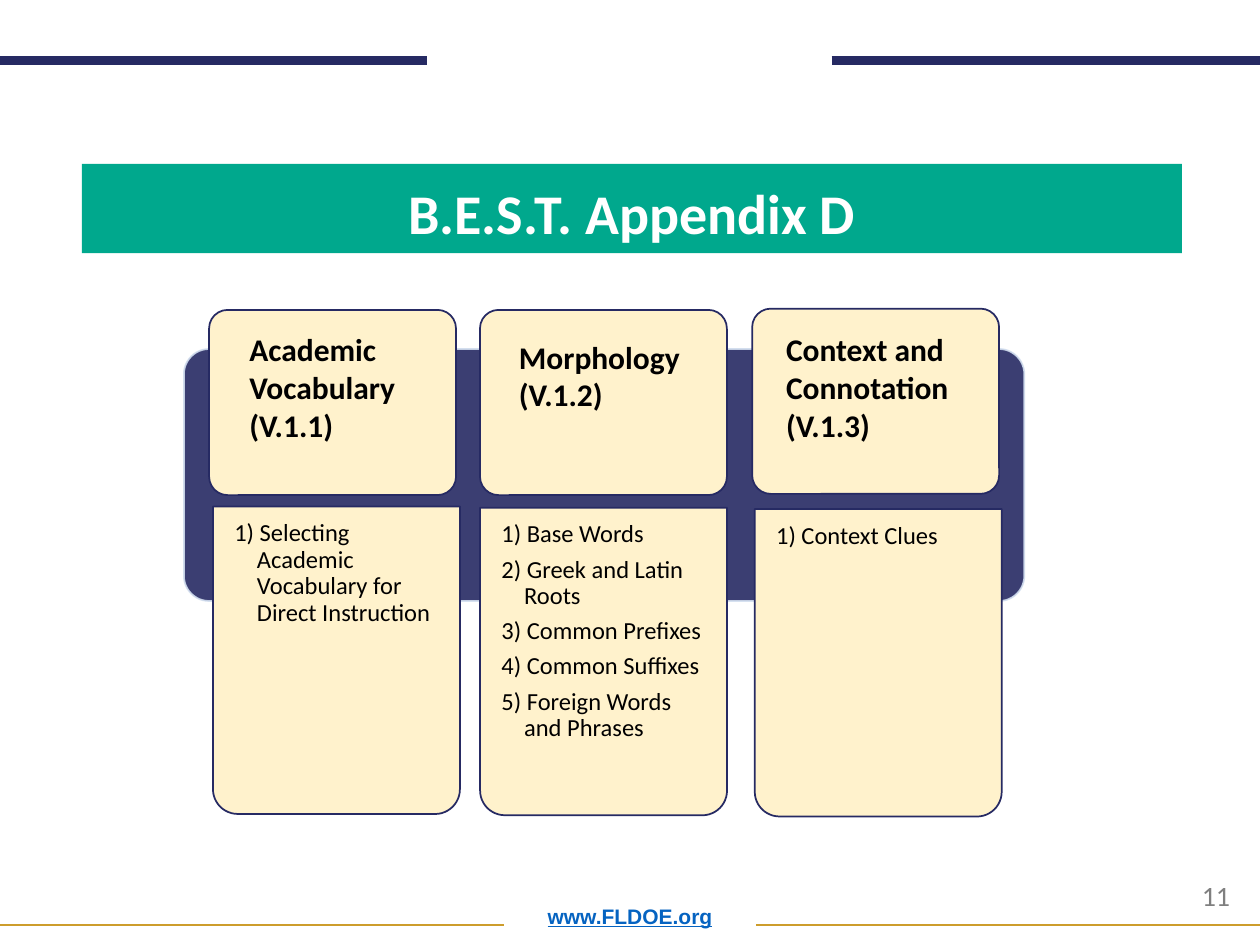
from lxml import etree
from pptx import Presentation
from pptx.dml.color import RGBColor
from pptx.enum.shapes import MSO_CONNECTOR, MSO_SHAPE
from pptx.enum.text import MSO_ANCHOR, MSO_AUTO_SIZE, PP_ALIGN
from pptx.oxml.ns import qn
from pptx.util import Inches, Pt

STRAIGHT = MSO_CONNECTOR.STRAIGHT
ROUNDED = MSO_SHAPE.ROUNDED_RECTANGLE
ROUND_TOP = MSO_SHAPE.ROUND_2_SAME_RECTANGLE
BOTTOM, CENTER, LEFT = MSO_ANCHOR.BOTTOM, PP_ALIGN.CENTER, PP_ALIGN.LEFT
NO_FIT = MSO_AUTO_SIZE.NONE

NAVY = RGBColor(0x26, 0x2A, 0x63)
GOLD = RGBColor(0xCD, 0x9D, 0x2C)
TEAL = RGBColor(0x00, 0xA8, 0x8D)
CREAM = RGBColor(0xFF, 0xF2, 0xCC)
PALE = RGBColor(0xD2, 0xDE, 0xEF)
LINK = RGBColor(0x05, 0x63, 0xC1)
GREY = RGBColor(0x7F, 0x7F, 0x7F)
WHITE = RGBColor(0xFF, 0xFF, 0xFF)
BLACK = RGBColor(0x00, 0x00, 0x00)

RULES = [(0, 3.39, 0.48, NAVY, 5), (6.6, 10, 0.48, NAVY, 5),
         (0, 4, 7.34, GOLD, 1), (6, 10, 7.34, GOLD, 1)]
HEAD_SIZE, LIST_SIZE = (1.96, 1.47), (1.96, 2.44)
COLUMNS = [
    {"head": (1.66, 2.46), "list": (1.69, 4.02),
     "label": (1.88, 2.57, 1.71, 1.31),
     "title": ["Academic Vocabulary", "(V.1.1)"],
     "items": ["1) Selecting Academic Vocabulary for Direct Instruction"]},
    {"head": (3.81, 2.46), "list": (3.81, 4.03),
     "label": (4.02, 2.63, 1.76, 0.71),
     "title": ["Morphology (V.1.2)"],
     "items": ["1) Base Words", "2) Greek and Latin Roots",
               "3) Common Prefixes", "4) Common Suffixes",
               "5) Foreign Words and Phrases"]},
    {"head": (5.97, 2.45), "list": (5.99, 4.04),
     "label": (6.14, 2.57, 1.63, 1.01),
     "title": ["Context and Connotation (V.1.3)"],
     "items": ["1) Context Clues"]},
]


def fill_text(tf, lines, size, color, align=LEFT, para=None, **font):
    """Write one paragraph per line with shared formatting."""
    tf.word_wrap = True
    tf.auto_size = NO_FIT
    font = {"name": "Calibri", "size": Pt(size), **font}
    for i, line in enumerate(lines):
        p = tf.add_paragraph() if i else tf.paragraphs[0]
        p.alignment = align
        for name, value in (para or {}).items():
            setattr(p, name, value)
        r = p.add_run()
        r.text = line
        r.font.color.rgb = color
        for name, value in font.items():
            setattr(r.font, name, value)


def add_text(s, box, lines, size, color, **formats):
    """Add a text box and return its text frame."""
    tf = s.shapes.add_textbox(*map(Inches, box)).text_frame
    fill_text(tf, lines, size, color, **formats)
    return tf


def add_panel(s, kind, box, fill, line, adjust):
    """Add a flat panel with a thin outline."""
    sp = s.shapes.add_shape(kind, *map(Inches, box))
    sp.shadow.inherit = False
    sp.fill.solid()
    sp.fill.fore_color.rgb = fill
    sp.line.color.rgb = line
    sp.line.width = Pt(1)
    sp.adjustments[0] = adjust
    return sp


def add_rule(s, left, right, y, color, width):
    """Draw a horizontal rule."""
    c = s.shapes.add_connector(STRAIGHT, Inches(left), Inches(y),
                               Inches(right), Inches(y))
    c.line.color.rgb = color
    c.line.width = Pt(width)
    etree.SubElement(c._element.spPr, qn("a:effectLst"))


def add_frame(s):
    """Draw the rules, web address and page number."""
    tf = add_text(s, (0.69, 7, 8.62, 0.42), ["www.FLDOE.org"], 12, LINK,
                  align=CENTER, para={"line_spacing": 0.9},
                  name="Arial", bold=True, underline=True)
    tf.vertical_anchor = BOTTOM
    for rule in RULES:
        add_rule(s, *rule)
    add_text(s, (9.44, 6.92, 0.52, 0.37), ["11"], 16, GREY)


def add_title(s, box, text):
    """Place the title placeholder as a coloured banner."""
    sp = s.shapes.title
    sp.left, sp.top, sp.width, sp.height = map(Inches, box)
    sp.fill.solid()
    sp.fill.fore_color.rgb = TEAL
    sp.text_frame.vertical_anchor = BOTTOM
    fill_text(sp.text_frame, [text], 32, WHITE, align=CENTER,
              para={"line_spacing": 0.9}, bold=True)


def add_backdrop(s, box):
    """Add the slightly transparent band behind the columns."""
    sp = add_panel(s, ROUNDED, box, NAVY, PALE, 0.1)
    for color in sp._element.spPr.iter(qn("a:srgbClr")):
        etree.SubElement(color, qn("a:alpha"), val="90000")


def add_column(s, column):
    """Add one heading card with its list card below."""
    add_panel(s, ROUNDED, column["head"] + HEAD_SIZE, CREAM, NAVY, 0.1)
    x, y = column["list"]
    add_panel(s, ROUND_TOP, (x, y) + LIST_SIZE, CREAM, NAVY, 0.1).rotation = 180
    tf = add_text(s, (x + 0.06, y, 1.84, 2.38), column["items"], 14, BLACK,
                  para={"line_spacing": 0.9, "space_after": Pt(5)})
    for side in ("left", "top", "right", "bottom"):
        setattr(tf, f"margin_{side}", Inches(0.11))
    for p in tf.paragraphs:
        pPr = p._p.get_or_add_pPr()
        pPr.set("marL", str(Inches(0.18)))
        pPr.set("indent", str(-Inches(0.18)))
    add_text(s, column["label"], column["title"], 18, BLACK, bold=True)


def main():
    """Build and save the slide."""
    prs = Presentation()
    prs.slide_width, prs.slide_height = Inches(10), Inches(7.5)
    s = prs.slides.add_slide(prs.slide_layouts[5])
    add_frame(s)
    add_title(s, (0.65, 1.3, 8.73, 0.71), "B.E.S.T. Appendix D")
    add_backdrop(s, (1.46, 2.77, 6.67, 2))
    for column in COLUMNS:
        add_column(s, column)
    prs.save("out.pptx")


if __name__ == "__main__":
    main()
